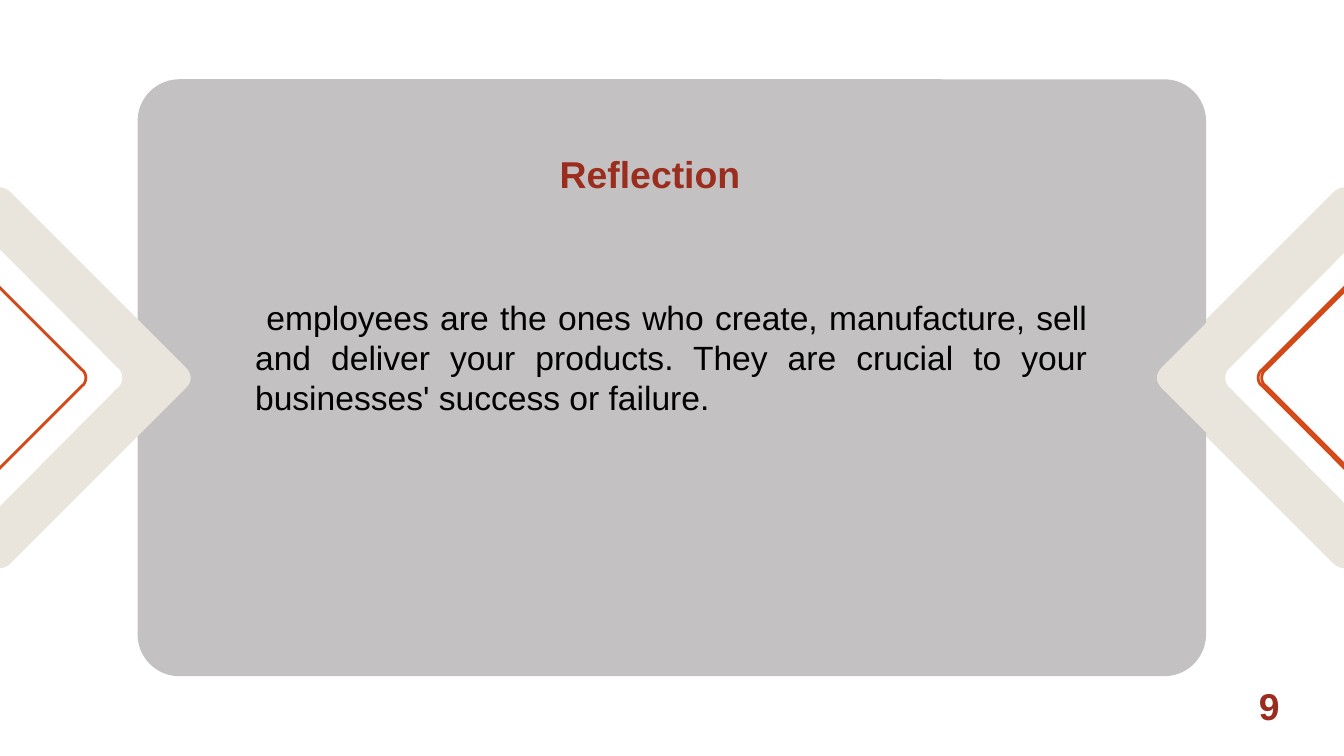
from pptx import Presentation
from pptx.dml.color import RGBColor
from pptx.enum.shapes import MSO_SHAPE
from pptx.enum.text import MSO_ANCHOR, MSO_AUTO_SIZE, PP_ALIGN
from pptx.oxml.ns import qn
from pptx.oxml.xmlchemy import OxmlElement
from pptx.util import Pt

ROUNDED = MSO_SHAPE.ROUNDED_RECTANGLE
MIDDLE, TOP = MSO_ANCHOR.MIDDLE, MSO_ANCHOR.TOP
NO_AUTOFIT = MSO_AUTO_SIZE.NONE
LEFT, CENTER, JUSTIFY = PP_ALIGN.LEFT, PP_ALIGN.CENTER, PP_ALIGN.JUSTIFY
RUST, ORANGE, SAND, GRAY, BLACK = "9B2D1F", "D34817", "E9E5DC", "C3C1C1", "000000"
MIDLINE = 202.4


def rgb(value):
    return RGBColor.from_string(value)


def bend_segments(freeform, pattern):
    """Join three line segments into one Bezier curve for each C in the pattern."""
    lines = freeform._element.iter(qn("a:lnTo"))
    lines = iter(list(lines))
    for kind in pattern:
        line = next(lines)
        if kind == "C":
            curve = OxmlElement("a:cubicBezTo")
            line.addprevious(curve)
            for part in (line, next(lines), next(lines)):
                curve.append(part[0])
                part.getparent().remove(part)


prs = Presentation()
prs.slide_width, prs.slide_height = Pt(720), Pt(405)
slide = prs.slides.add_slide(prs.slide_layouts[5])
shapes = slide.shapes

# Half outlines as (depth behind the tip, height), with control points of the curves
band_half = [(0, 0), (0, -2.2), (1.4, -4.3), (2.9, -5.8),
             (96.5, -99.4), (100.1, -103), (105.8, -103), (108.7, -99.4),
             (121, -87.8), (39.6, -5.8), (37.4, -4.3), (36.7, -2.2), (36.7, 0)]
edge_half = [(131.8, -74.9), (130.3, -74.9), (128.2, -74.5), (127.4, -73.4),
             (58.3, -4.3), (56.9, -3.6), (56.2, -1.4), (56.2, 0)]
# Outline, curve pattern, depth of its centre, and 1 if its tip is up before turning
parts = [(band_half, "CLCLLC", 60.5, 1), (edge_half, "CLC", 94, -1)]

# Chevrons (tip, direction away from the tip); the card covers the first one
card = None
for tip, direction in [(617.8, 1), (102.2, -1), (619.7, 1)]:
    chevron = shapes.add_group_shape()
    for half, pattern, center, upward in parts:
        whole = half + [(depth, -height) for depth, height in reversed(half[:-1])]
        center_x = tip + direction * center
        outline = [(Pt(center_x + height), Pt(MIDLINE + upward * (depth - center)))
                   for depth, height in whole]
        builder = chevron.shapes.build_freeform(*outline[0])
        builder.add_line_segments(outline[1:], close=True)
        stripe = builder.convert_to_shape()
        bend_segments(stripe, pattern + pattern[::-1])
        stripe.rotation = 270 if direction == upward else 90
        stripe.shadow.inherit = False
        if half is band_half:
            stripe.fill.solid()
            stripe.fill.fore_color.rgb = rgb(SAND)
            stripe.line.fill.background()
        else:
            stripe.fill.background()
            stripe.line.color.rgb = rgb(ORANGE)
            stripe.line.width = Pt(1.5)
    if card is None:
        card = shapes.add_shape(ROUNDED, Pt(73.7), Pt(42.5), Pt(572.4), Pt(319.8))
        card.adjustments[0] = 0.07
        card.shadow.inherit = False
        card.fill.solid()
        card.fill.fore_color.rgb = rgb(GRAY)
        card.line.fill.background()

# The title lies in front of the card
title = shapes.title
title.left, title.top, title.width, title.height = Pt(278), Pt(60.5), Pt(163.4), Pt(55.4)
card._element.addnext(title._element)

reflection = shapes.add_textbox(Pt(129.6), Pt(155.3), Pt(460), Pt(72.7))
page_number = shapes.add_textbox(Pt(667.4), Pt(362.6), Pt(38.2), Pt(31.7))

title_frame = {"vertical_anchor": MIDDLE, "margin_left": Pt(7.2), "margin_right": Pt(30),
               "margin_top": Pt(17), "margin_bottom": Pt(7.2)}
heading_font = {"size": Pt(20), "bold": True}
texts = [
    (title, "Reflection", CENTER, RUST, title_frame, heading_font),
    (reflection, " employees are the ones who create, manufacture, sell and deliver your "
     "products. They are crucial to your businesses' success or failure.",
     JUSTIFY, BLACK, {"vertical_anchor": TOP}, {"size": Pt(18), "bold": False}),
    (page_number, "9", LEFT, RUST, {"vertical_anchor": TOP}, heading_font),
]
for box, wording, alignment, color, frame_format, font_format in texts:
    frame = box.text_frame
    frame.word_wrap = True
    frame.auto_size = NO_AUTOFIT
    for name, value in frame_format.items():
        setattr(frame, name, value)
    paragraph = frame.paragraphs[0]
    paragraph.alignment = alignment
    run = paragraph.add_run()
    run.text = wording
    run.font.name = "Arial"
    run.font.color.rgb = rgb(color)
    for name, value in font_format.items():
        setattr(run.font, name, value)

prs.save("out.pptx")
